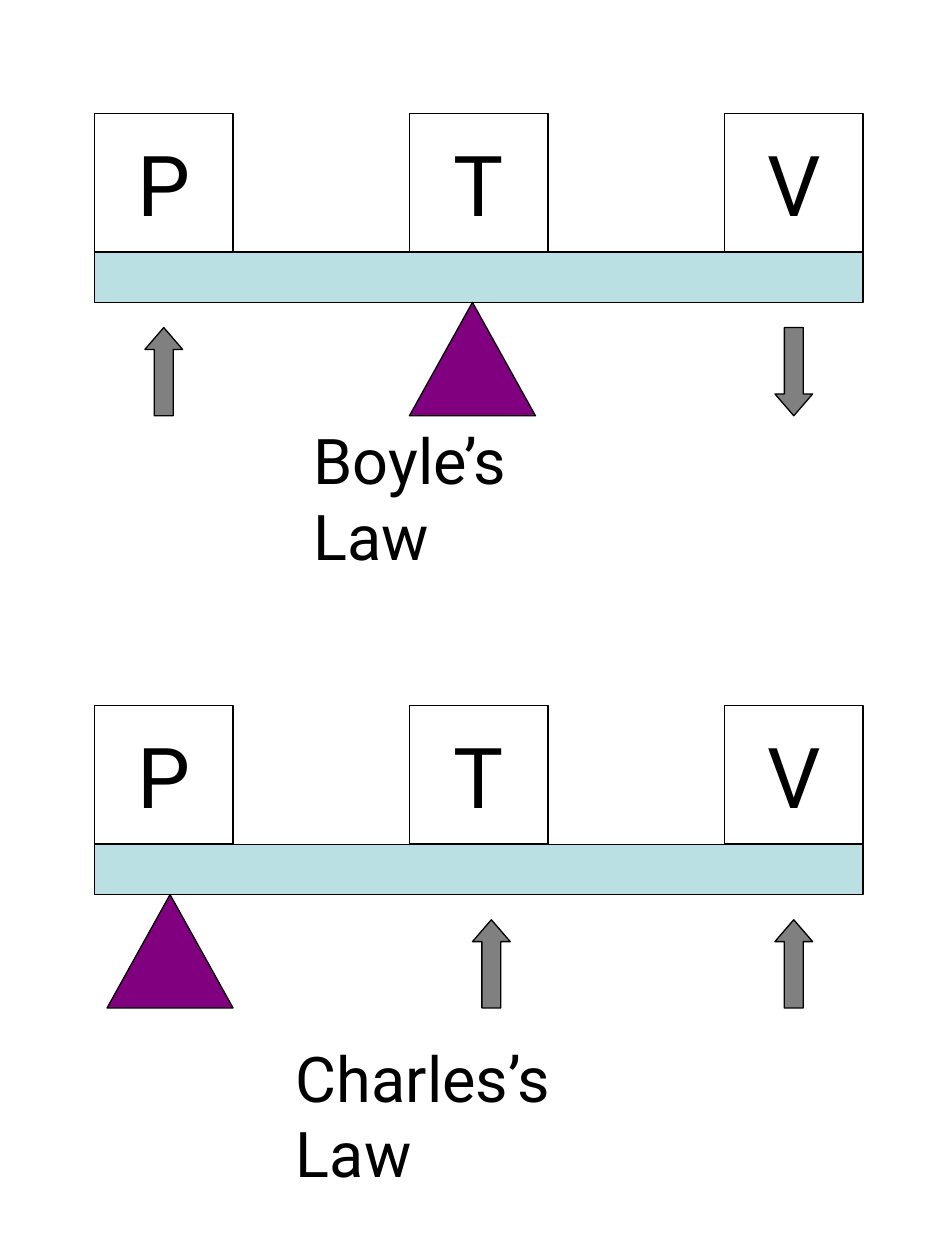
from pptx import Presentation
from pptx.dml.color import RGBColor
from pptx.enum.shapes import MSO_SHAPE
from pptx.enum.text import MSO_ANCHOR, PP_ALIGN
from pptx.util import Inches, Pt

RECTANGLE = MSO_SHAPE.RECTANGLE
TRIANGLE = MSO_SHAPE.ISOSCELES_TRIANGLE
UP_ARROW = MSO_SHAPE.UP_ARROW
MIDDLE = MSO_ANCHOR.MIDDLE
CENTER = PP_ALIGN.CENTER

THEME = {
    "font": "Roboto",
    "ink": RGBColor(0x00, 0x00, 0x00),
    "block": RGBColor(0xFF, 0xFF, 0xFF),
    "beam": RGBColor(0xBB, 0xE0, 0xE3),
    "pivot": RGBColor(0x80, 0x00, 0x80),
    "arrow": RGBColor(0x80, 0x80, 0x80),
    "line": Pt(0.75),
    "letter_size": Pt(48),
    "caption_size": Pt(36),
}

# The page is a grid of 75 columns by 100 rows.
COLUMNS, ROWS = 75, 100
deck = Presentation()
deck.slide_width, deck.slide_height = Inches(7.5), Inches(10)
page = deck.slides.add_slide(deck.slide_layouts[6])


def place(column, row, width, height):
    """Turn grid units into left, top, width and height."""
    across, down = deck.slide_width / COLUMNS, deck.slide_height / ROWS
    return (round(column * across), round(row * down),
            round(width * across), round(height * down))


def add_part(kind, column, row, width, height, role, text=""):
    """Draw an outlined shape in its theme colour, with an optional letter."""
    part = page.shapes.add_shape(kind, *place(column, row, width, height))
    part.shadow.inherit = False
    part.fill.solid()
    part.fill.fore_color.rgb = THEME[role]
    part.line.color.rgb = THEME["ink"]
    part.line.width = THEME["line"]
    if text:
        part.text_frame.word_wrap = False
        part.text_frame.vertical_anchor = MIDDLE
        para = part.text_frame.paragraphs[0]
        para.text = text
        para.alignment = CENTER
        para.font.name = THEME["font"]
        para.font.size = THEME["letter_size"]
        para.font.color.rgb = THEME["ink"]
    return part


BLOCK = 11
BLOCK_COLUMNS = {"P": 7.5, "T": 32.5, "V": 57.5}
BEAM_WIDTH = BLOCK_COLUMNS["V"] + BLOCK - BLOCK_COLUMNS["P"]
BEAM_HEIGHT = 4

# Each arrow is (column, rotation); each caption is (column, row, width).
balances = [
    {"law": "Boyle’s Law", "top": 9, "pivot": 32.5,
     "arrows": [(61.5, 180), (11.5, 0)], "caption": (23.9, 33, 27.6)},
    {"law": "Charles’s Law", "top": 56, "pivot": 8.5,
     "arrows": [(37.5, 0), (61.5, 0)], "caption": (22.5, 82, 31.9)},
]

for balance in balances:
    beam_row = balance["top"] + BLOCK
    pivot_row = beam_row + BEAM_HEIGHT
    add_part(RECTANGLE, BLOCK_COLUMNS["P"], beam_row, BEAM_WIDTH, BEAM_HEIGHT, "beam")
    for letter in "TPV":
        add_part(RECTANGLE, BLOCK_COLUMNS[letter], balance["top"], BLOCK, BLOCK,
                 "block", letter)
    add_part(TRIANGLE, balance["pivot"], pivot_row, 10, 9, "pivot")
    for column, rotation in balance["arrows"]:
        arrow = add_part(UP_ARROW, column, pivot_row + 2, 3, 7, "arrow")
        arrow.adjustments[1] = 0.58
        arrow.rotation = rotation

for balance in balances:
    column, row, width = balance["caption"]
    box = page.shapes.add_textbox(*place(column, row, width, 7))
    box.text_frame.word_wrap = True
    # The wide right margin sends the second word to its own line.
    box.text_frame.margin_right = Inches(0.4)
    para = box.text_frame.paragraphs[0]
    para.text = balance["law"]
    para.font.name = THEME["font"]
    para.font.size = THEME["caption_size"]
    para.font.color.rgb = THEME["ink"]

deck.save("out.pptx")
